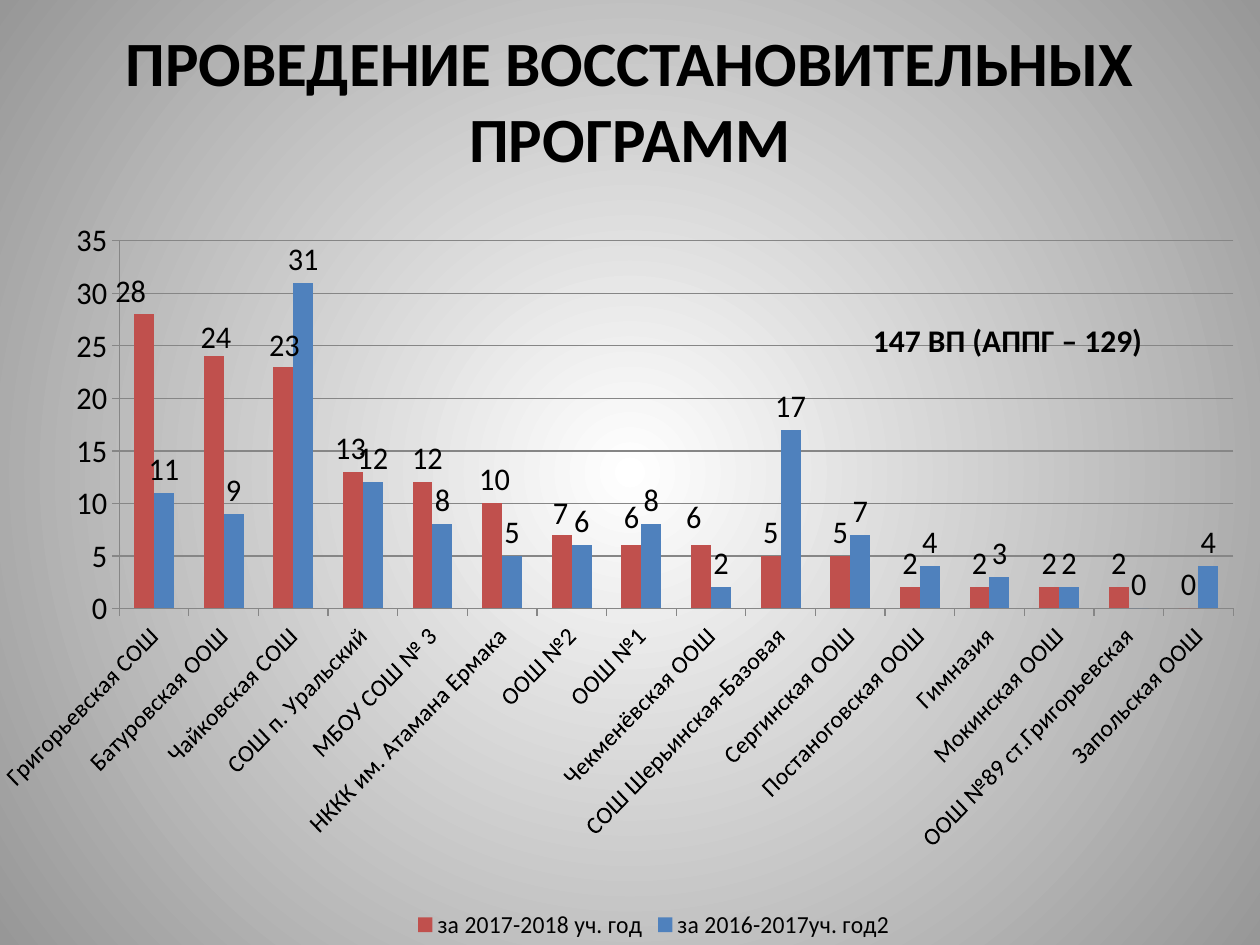
from dataclasses import dataclass

from lxml import etree
from pptx import Presentation
from pptx import util as u
from pptx.chart.chart import Chart
from pptx.chart.data import CategoryChartData
from pptx.dml.color import RGBColor
from pptx.enum import chart as ce
from pptx.enum import text
from pptx.oxml.ns import qn
from pptx.slide import Slide


@dataclass(frozen=True)
class Theme:
    font: str = "Calibri"
    ink: RGBColor = RGBColor(0, 0, 0)
    grid: RGBColor = RGBColor(0x86, 0x86, 0x86)
    centre: RGBColor = RGBColor(0xFF, 0xFF, 0xFF)
    edge: RGBColor = RGBColor(0x97, 0x97, 0x97)
    current: RGBColor = RGBColor(0xC0, 0x50, 0x4D)
    previous: RGBColor = RGBColor(0x4F, 0x81, 0xBD)
    title: u.Pt = u.Pt(36)
    body: u.Pt = u.Pt(18)
    small: u.Pt = u.Pt(14)


@dataclass(frozen=True)
class Box:
    left: float
    top: float
    width: float
    height: float

    def lengths(self) -> tuple[u.Length, ...]:
        return tuple(u.Inches(n) for n in (self.left, self.top, self.width, self.height))


@dataclass(frozen=True)
class Label:
    words: str
    box: Box
    size: u.Length
    align: text.PP_ALIGN
    anchor: text.MSO_ANCHOR


@dataclass(frozen=True)
class School:
    name: str
    current: int
    previous: int


THEME = Theme()
CHART_BOX = Box(0, 1.58, 10, 5.92)
PLOT = {"x": 0.059, "y": 0.056, "w": 0.919, "h": 0.493}
LABELS = (
    Label("ПРОВЕДЕНИЕ ВОССТАНОВИТЕЛЬНЫХ ПРОГРАММ", Box(0, 0, 10, 1.58), THEME.title,
          text.PP_ALIGN.CENTER, text.MSO_ANCHOR.MIDDLE),
    Label("147 ВП (АППГ – 129)", Box(6.83, 2.5, 2.58, 0.4), THEME.body,
          text.PP_ALIGN.LEFT, text.MSO_ANCHOR.TOP),
)
SCHOOLS = (
    School("Григорьевская СОШ", 28, 11),
    School("Батуровская ООШ", 24, 9),
    School("Чайковская СОШ", 23, 31),
    School("СОШ п. Уральский", 13, 12),
    School("МБОУ СОШ № 3", 12, 8),
    School("НККК им. Атамана Ермака", 10, 5),
    School("ООШ №2", 7, 6),
    School("ООШ №1", 6, 8),
    School("Чекменёвская ООШ", 6, 2),
    School("СОШ Шерьинская-Базовая", 5, 17),
    School("Сергинская ООШ", 5, 7),
    School("Постаноговская ООШ", 2, 4),
    School("Гимназия", 2, 3),
    School("Мокинская ООШ", 2, 2),
    School("ООШ №89 ст.Григорьевская", 2, 0),
    School("Запольская ООШ", 0, 4),
)
LABEL_SHIFTS = (
    (-0.011, 0.002), (0.002, 0.007), (0.001, 0.003), (-0.002, 0), (0.004, 0),
    (0.002, 0), (-0.001, 0.003), (0, -0.006), (-0.006, -0.006),
)


def paint_background(slide: Slide) -> None:
    fill = slide.background.fill
    fill.gradient()
    for stop, position, color in zip(fill.gradient_stops, (0, 1), (THEME.centre, THEME.edge)):
        stop.position = position
        stop.color.rgb = color
    gradient = next(slide.element.iter(qn("a:gradFill")))
    linear = gradient.find(qn("a:lin"))
    circle = etree.Element(qn("a:path"), path="circle")
    etree.SubElement(circle, qn("a:fillToRect"), l="50000", t="50000", r="50000", b="50000")
    gradient.replace(linear, circle)


def add_label(slide: Slide, label: Label) -> None:
    shape = slide.shapes.add_textbox(*label.box.lengths())
    frame = shape.text_frame
    frame.word_wrap = True
    frame.vertical_anchor = label.anchor
    paragraph = frame.paragraphs[0]
    paragraph.text = label.words
    paragraph.alignment = label.align
    paragraph.font.name = THEME.font
    paragraph.font.size = label.size
    paragraph.font.bold = True
    paragraph.font.color.rgb = THEME.ink


def manual_layout(values: dict[str, float], inner: bool = False) -> etree.ElementBase:
    layout = etree.Element(qn("c:layout"))
    manual = etree.SubElement(layout, qn("c:manualLayout"))
    if inner:
        etree.SubElement(manual, qn("c:layoutTarget"), val="inner")
        for axis in "xy":
            etree.SubElement(manual, qn(f"c:{axis}Mode"), val="edge")
    for name, value in values.items():
        etree.SubElement(manual, qn(f"c:{name}"), val=str(value))
    return layout


def style_axes(chart: Chart) -> None:
    for axis in (chart.category_axis, chart.value_axis):
        axis.major_tick_mark = ce.XL_TICK_MARK.OUTSIDE
        axis.format.line.color.rgb = THEME.grid
    chart.category_axis.tick_labels.font.size = THEME.small
    chart.category_axis.tick_labels.font.color.rgb = THEME.ink
    category_axis = next(chart.element.iter(qn("c:catAx")))
    next(category_axis.iter(qn("a:bodyPr"))).set("rot", "-2700000")
    axis = chart.value_axis
    axis.minimum_scale, axis.maximum_scale, axis.major_unit = 0, 35, 5
    axis.has_major_gridlines = True
    axis.major_gridlines.format.line.color.rgb = THEME.grid


def style_series(chart: Chart) -> None:
    plot = chart.plots[0]
    plot.gap_width = 150
    plot.overlap = 0
    plot.vary_by_categories = False
    for series, color in zip(plot.series, (THEME.current, THEME.previous)):
        series.format.fill.solid()
        series.format.fill.fore_color.rgb = color
        series.data_labels.show_value = True
        series.data_labels.position = ce.XL_LABEL_POSITION.OUTSIDE_END
    for index in range(len(LABEL_SHIFTS)):
        point = plot.series[0].points[index]
        point.data_label.position = ce.XL_LABEL_POSITION.OUTSIDE_END
    for label, (x, y) in zip(chart.element.iter(qn("c:dLbl")), LABEL_SHIFTS):
        label.insert(1, manual_layout({"x": x, "y": y}))


def add_school_chart(slide: Slide) -> None:
    data = CategoryChartData()
    data.categories = [school.name for school in SCHOOLS]
    data.add_series("за 2017-2018 уч. год", [school.current for school in SCHOOLS])
    data.add_series("за 2016-2017уч. год2", [school.previous for school in SCHOOLS])
    chart = slide.shapes.add_chart(
        ce.XL_CHART_TYPE.COLUMN_CLUSTERED, *CHART_BOX.lengths(), data).chart
    chart.has_title = False
    chart.font.name = THEME.font
    chart.font.size = THEME.body
    chart.font.color.rgb = THEME.ink
    chart.has_legend = True
    chart.legend.position = ce.XL_LEGEND_POSITION.BOTTOM
    chart.legend.include_in_layout = False
    chart.legend.font.size = THEME.small
    chart.legend.font.color.rgb = THEME.ink
    style_axes(chart)
    style_series(chart)
    plot_area = next(chart.element.iter(qn("c:plotArea")))
    for layout in plot_area.findall(qn("c:layout")):
        plot_area.remove(layout)
    plot_area.insert(0, manual_layout(PLOT, inner=True))


def main() -> None:
    presentation = Presentation()
    presentation.slide_width = u.Inches(10)
    presentation.slide_height = u.Inches(7.5)
    slide = presentation.slides.add_slide(presentation.slide_layouts[6])
    paint_background(slide)
    add_school_chart(slide)
    for label in LABELS:
        add_label(slide, label)
    presentation.save("out.pptx")


if __name__ == "__main__":
    main()
